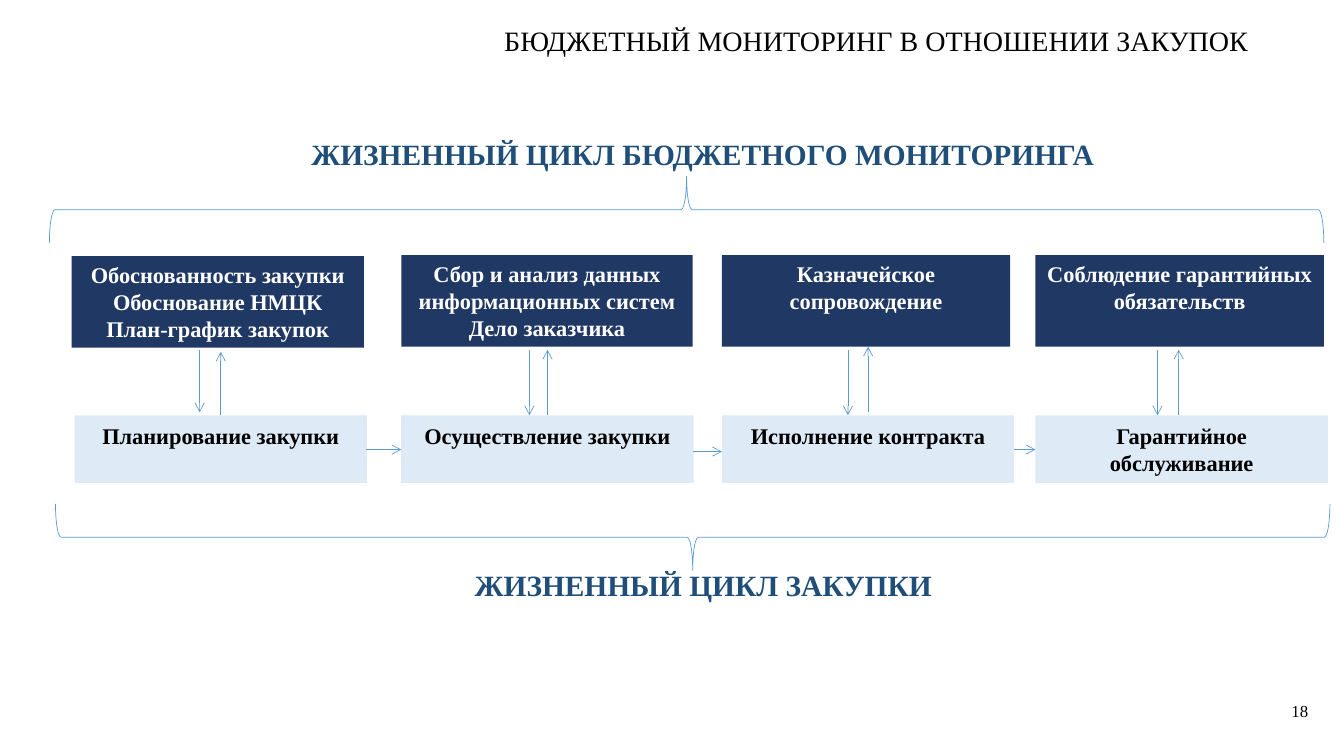
import pptx
import pptx.util
import pptx.dml.color
import pptx.enum.shapes
import pptx.enum.text
import pptx.oxml
from pptx.util import Inches

NAVY = pptx.dml.color.RGBColor(0x20, 0x38, 0x64)
PALE = pptx.dml.color.RGBColor(0xDE, 0xEB, 0xF7)
HEADING = pptx.dml.color.RGBColor(0x1F, 0x4E, 0x79)
LINE = pptx.dml.color.RGBColor(0x5B, 0x9B, 0xD5)
BLACK = pptx.dml.color.RGBColor(0, 0, 0)
WHITE = pptx.dml.color.RGBColor(0xFF, 0xFF, 0xFF)
SHAPE = pptx.enum.shapes.MSO_SHAPE
ALIGN = pptx.enum.text.PP_ALIGN
ANCHOR = pptx.enum.text.MSO_ANCHOR

deck = pptx.Presentation()
deck.slide_width = Inches(13.33)
deck.slide_height = Inches(7.5)
page = deck.slides.add_slide(deck.slide_layouts[6])


def add_text(lines, left, top, width, height, size=16, color=BLACK, bold=True,
             fill=None, align=ALIGN.CENTER, anchor=ANCHOR.TOP,
             inset_x=0.1, inset_y=0.05, spacing=None):
    area = Inches(left), Inches(top), Inches(width), Inches(height)
    if fill is None:
        box = page.shapes.add_textbox(*area)
    else:
        box = page.shapes.add_shape(SHAPE.RECTANGLE, *area)
        box.shadow.inherit = False
        box.fill.solid()
        box.fill.fore_color.rgb = fill
        box.line.fill.background()
    frame = box.text_frame
    frame.word_wrap = True
    frame.vertical_anchor = anchor
    frame.margin_left = frame.margin_right = Inches(inset_x)
    frame.margin_top = frame.margin_bottom = Inches(inset_y)
    for index, line in enumerate(lines):
        para = frame.paragraphs[0] if index == 0 else frame.add_paragraph()
        para.alignment = align
        para.line_spacing = spacing
        span = para.add_run()
        span.text = line
        span.font.name = "Times New Roman"
        span.font.size = pptx.util.Pt(size)
        span.font.bold = bold
        span.font.color.rgb = color


def add_arrow(x1, y1, x2, y2):
    arrow = page.shapes.add_connector(
        pptx.enum.shapes.MSO_CONNECTOR.STRAIGHT,
        Inches(x1), Inches(y1), Inches(x2), Inches(y2))
    arrow.line.color.rgb = LINE
    arrow.line.width = pptx.util.Pt(0.5)
    tail = pptx.oxml.parse_xml(
        '<a:tailEnd xmlns:a="http://schemas.openxmlformats.org/drawingml/2006/main" type="arrow"/>')
    arrow.line._get_or_add_ln().append(tail)
    effects = pptx.oxml.parse_xml(
        '<a:effectLst xmlns:a="http://schemas.openxmlformats.org/drawingml/2006/main"/>')
    arrow._element.spPr.append(effects)


add_text(["БЮДЖЕТНЫЙ МОНИТОРИНГ В ОТНОШЕНИИ ЗАКУПОК"], 2.93, 0.24, 9.55, 0.38,
         size=20, bold=False, align=ALIGN.RIGHT, anchor=ANCHOR.BOTTOM, spacing=0.9)
add_text(["ЖИЗНЕННЫЙ ЦИКЛ БЮДЖЕТНОГО МОНИТОРИНГА"], 2.61, 1.17, 8.72, 0.71,
         size=21, color=HEADING, anchor=ANCHOR.MIDDLE)
add_text(["ЖИЗНЕННЫЙ ЦИКЛ ЗАКУПКИ"], 3.64, 5.45, 6.67, 0.71,
         size=21, color=HEADING, anchor=ANCHOR.MIDDLE)

monitoring_boxes = [
    (0.71, 2.54, 2.9, ["Обоснованность закупки", "Обоснование НМЦК", "План-график закупок"]),
    (3.98, 2.53, 2.89, ["Сбор и анализ данных информационных систем", "Дело заказчика"]),
    (7.16, 2.53, 2.86, ["Казначейское сопровождение"]),
    (10.27, 2.53, 2.86, ["Соблюдение гарантийных обязательств"]),
]
for left, top, width, lines in monitoring_boxes:
    add_text(lines, left, top, width, 0.91, color=WHITE, fill=NAVY)

purchase_boxes = [
    (0.74, "Планирование закупки"),
    (3.98, "Осуществление закупки"),
    (7.16, "Исполнение контракта"),
    (10.27, "Гарантийное обслуживание"),
]
for left, label in purchase_boxes:
    add_text([label], left, 4.12, 2.9, 0.67, fill=PALE, inset_x=0.13, inset_y=0.07)

for start, end, y in [(3.63, 3.98, 4.46), (6.87, 7.16, 4.48), (10.06, 10.27, 4.46)]:
    add_arrow(start, y, end, y)

exchange_arrows = [
    (1.98, 4.09, 2.19, 4.12, 3.49),
    (5.25, 4.12, 5.43, 4.12, 3.47),
    (8.41, 4.12, 8.61, 4.09, 3.44),
    (11.48, 4.12, 11.69, 4.12, 3.47),
]
for down_x, down_end, up_x, up_start, up_end in exchange_arrows:
    add_arrow(down_x, 3.47, down_x, down_end)
    add_arrow(up_x, up_start, up_x, up_end)

for left, top, rotation in [(6.48, -4.24, 270), (6.54, -0.99, 90)]:
    brace = page.shapes.add_shape(
        SHAPE.RIGHT_BRACE, Inches(left), Inches(top), Inches(0.66), Inches(12.64))
    brace.rotation = rotation
    brace.shadow.inherit = False
    brace.fill.background()
    brace.line.color.rgb = LINE
    brace.line.width = pptx.util.Pt(0.5)

add_text(["18"], 12.71, 6.9, 0.48, 0.3, size=12, bold=False, align=ALIGN.LEFT)

deck.save("out.pptx")
